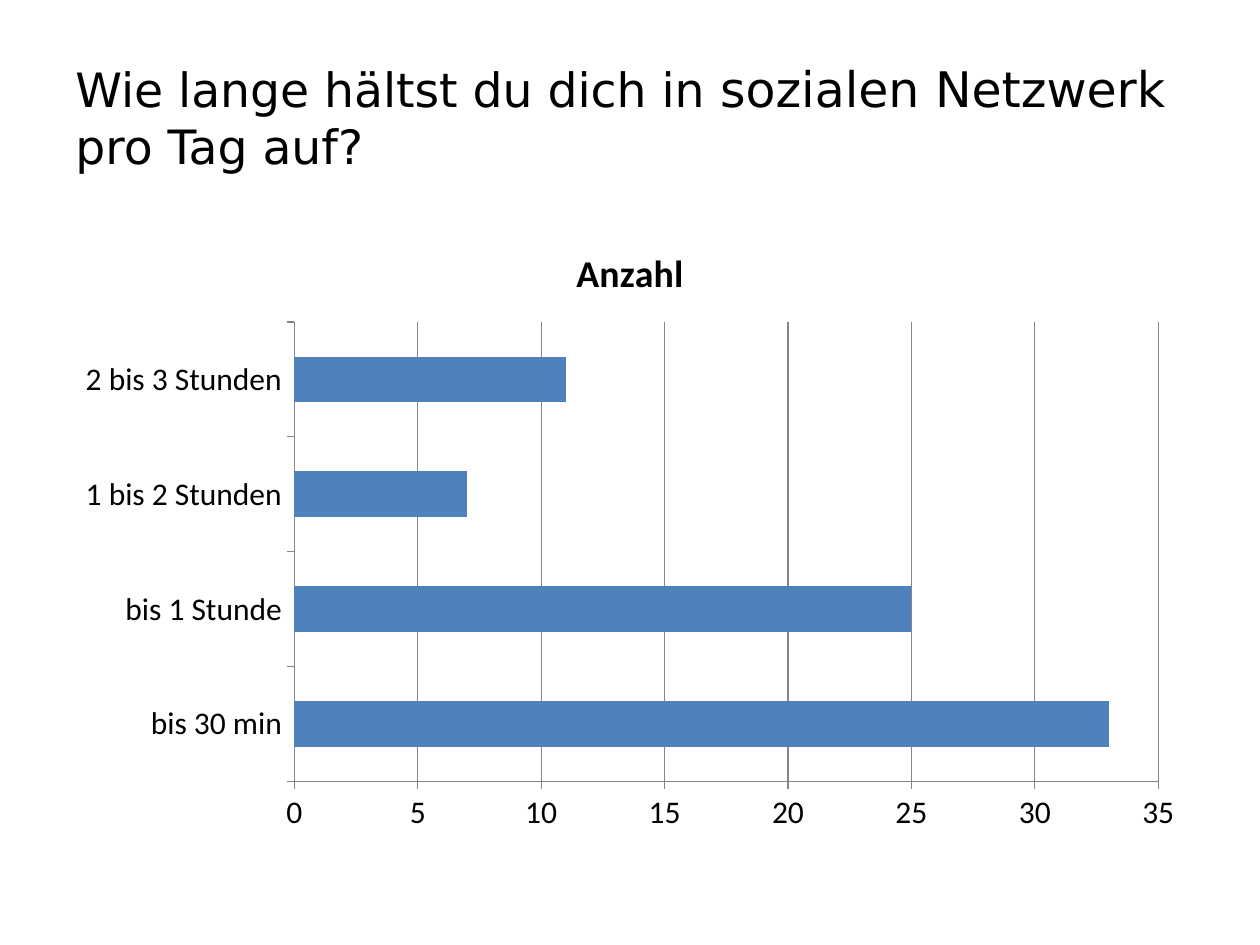
from pptx import Presentation
from pptx.chart.data import CategoryChartData
from pptx.dml.color import RGBColor
from pptx.enum.chart import XL_CHART_TYPE, XL_TICK_MARK
from pptx.enum.text import MSO_ANCHOR
from pptx.util import Inches, Pt

BLACK = RGBColor(0x00, 0x00, 0x00)
BLUE = RGBColor(0x4F, 0x81, 0xBD)
GRAY = RGBColor(0x86, 0x86, 0x86)


def format_font(font, name, size, bold=False):
    font.name = name
    font.size = Pt(size)
    font.bold = bold
    font.color.rgb = BLACK


def add_title(slide, left, top, width, height):
    text_frame = slide.shapes.add_textbox(left, top, width, height).text_frame
    text_frame.word_wrap = True
    text_frame.vertical_anchor = MSO_ANCHOR.MIDDLE
    paragraph = text_frame.paragraphs[0]
    paragraph.text = "Wie lange hältst du dich in "
    paragraph.add_run().text = "sozialen Netzwerk"
    paragraph.add_line_break()
    paragraph.add_run().text = "pro Tag auf?"
    for run, size in zip(paragraph.runs, (27, 28, 27)):
        format_font(run.font, "DejaVu Sans", size)


def add_usage_chart(slide, left, top, width, height):
    data = CategoryChartData()
    data.categories = ["bis 30 min", "bis 1 Stunde", "1 bis 2 Stunden", "2 bis 3 Stunden"]
    data.add_series("Anzahl", (33, 25, 7, 11))
    chart = slide.shapes.add_chart(
        XL_CHART_TYPE.BAR_CLUSTERED, left, top, width, height, data
    ).chart
    format_font(chart.font, "Calibri", 18)
    chart.has_legend = False

    chart.has_title = True
    title_frame = chart.chart_title.text_frame
    title_frame.text = "Anzahl"
    format_font(title_frame.paragraphs[0].runs[0].font, "Calibri", 21.6, bold=True)

    plot = chart.plots[0]
    plot.gap_width = 150
    plot.vary_by_categories = False
    series = plot.series[0]
    series.format.fill.solid()
    series.format.fill.fore_color.rgb = BLUE

    value_axis = chart.value_axis
    value_axis.minimum_scale = 0
    value_axis.maximum_scale = 35
    value_axis.major_unit = 5
    value_axis.has_major_gridlines = True
    for axis in (chart.category_axis, value_axis):
        axis.major_tick_mark = XL_TICK_MARK.OUTSIDE
        axis.minor_tick_mark = XL_TICK_MARK.NONE
    for line in (
        chart.category_axis.format.line,
        value_axis.format.line,
        value_axis.major_gridlines.format.line,
    ):
        line.color.rgb = GRAY
        line.width = Pt(0.75)


def main():
    presentation = Presentation()
    presentation.slide_width = Inches(10)
    presentation.slide_height = Inches(7.5)
    slide = presentation.slides.add_slide(presentation.slide_layouts[6])
    add_title(slide, Inches(0.5), Inches(0.3), Inches(9), Inches(1.25))
    add_usage_chart(slide, Inches(0.5), Inches(1.75), Inches(9), Inches(4.95))
    presentation.save("out.pptx")


if __name__ == "__main__":
    main()
